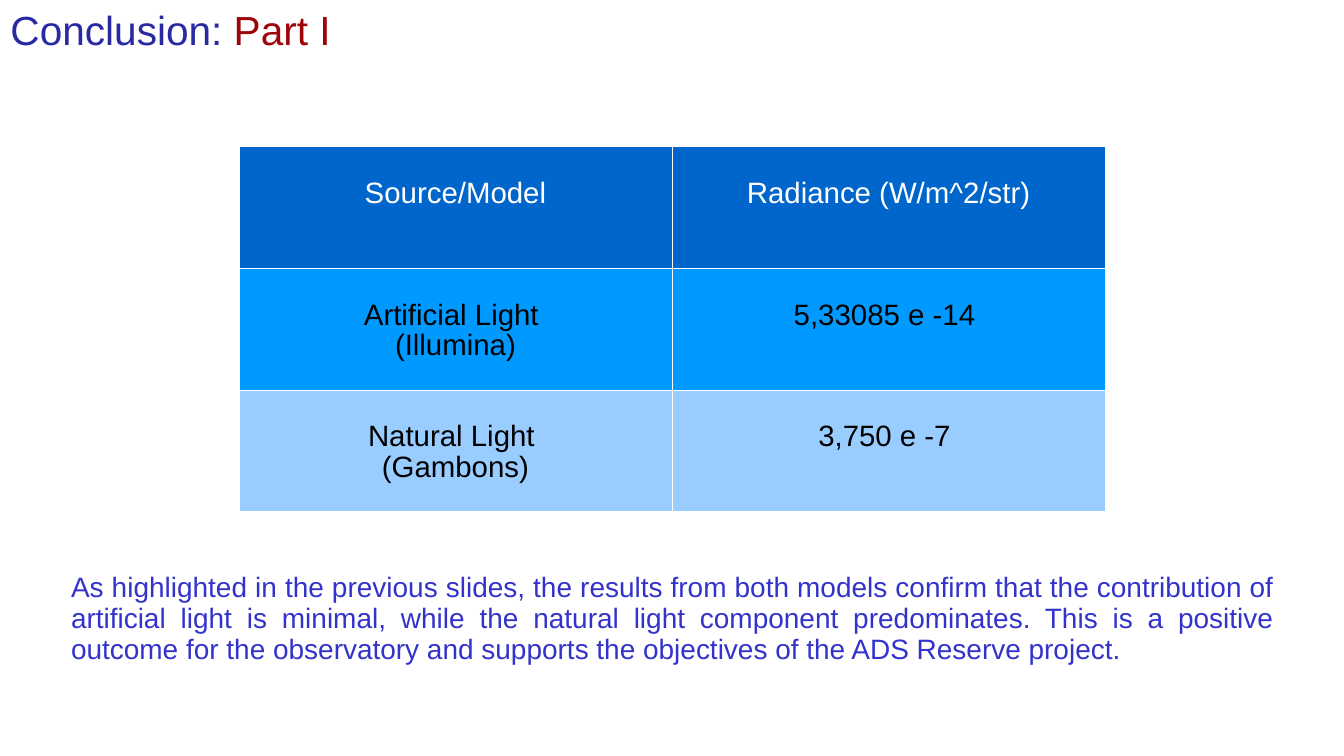
from pptx import Presentation
from pptx.dml.color import RGBColor
from pptx.enum.text import MSO_AUTO_SIZE, PP_ALIGN
from pptx.oxml import parse_xml
from pptx.oxml.ns import nsdecls
from pptx.util import Cm, Pt

WHITE = RGBColor(0xFF, 0xFF, 0xFF)
BLACK = RGBColor(0x00, 0x00, 0x00)
NAVY = RGBColor(0x29, 0x29, 0xA3)
RED = RGBColor(0x9D, 0x05, 0x0B)
INDIGO = RGBColor(0x33, 0x33, 0xCC)
HEADER_BLUE = RGBColor(0x00, 0x66, 0xCC)
MID_BLUE = RGBColor(0x00, 0x99, 0xFF)
LIGHT_BLUE = RGBColor(0x99, 0xCC, 0xFF)


class Deck:
    font = "Arial"
    line_spacing = 0.93
    inset = Cm(0.3)
    cell_top = Cm(1.65)
    cell_size = 42

    def __init__(self, width, height):
        self.prs = Presentation()
        self.prs.slide_width = Cm(width)
        self.prs.slide_height = Cm(height)
        self.s = self.prs.slides.add_slide(self.prs.slide_layouts[6])

    def paragraph(self, p, runs, size, align):
        p.alignment = align
        p.line_spacing = self.line_spacing
        for text, color in runs:
            r = p.add_run()
            r.text = text
            r.font.name = self.font
            r.font.size = Pt(size)
            r.font.color.rgb = color

    def text(self, box, runs, size, align=PP_ALIGN.LEFT, wrap=True):
        sp = self.s.shapes.add_textbox(*map(Cm, box))
        tf = sp.text_frame
        tf.word_wrap = wrap
        tf.auto_size = MSO_AUTO_SIZE.SHAPE_TO_FIT_TEXT
        tf.margin_left = tf.margin_right = self.inset
        tf.margin_top = tf.margin_bottom = self.inset
        self.paragraph(tf.paragraphs[0], runs, size, align)

    def borders(self, cell, color):
        tc_pr = cell._tc.get_or_add_tcPr()
        for i, side in enumerate(("lnL", "lnR", "lnT", "lnB")):
            tc_pr.insert(i, parse_xml(
                f'<a:{side} {nsdecls("a")} w="{Pt(0.25)}"><a:solidFill>'
                f'<a:srgbClr val="{color}"/></a:solidFill></a:{side}>'))

    def cell(self, cell, lines, fill, color):
        cell.fill.solid()
        cell.fill.fore_color.rgb = fill
        cell.margin_left = cell.margin_right = cell.margin_bottom = 0
        cell.margin_top = self.cell_top
        tf = cell.text_frame
        for i, line in enumerate(lines):
            p = tf.add_paragraph() if i else tf.paragraphs[0]
            self.paragraph(p, [(line, color)], self.cell_size, PP_ALIGN.CENTER)
        self.borders(cell, WHITE)

    def table(self, box, rows):
        table = self.s.shapes.add_table(len(rows), 2, *map(Cm, box)).table
        for i, (fill, color, cells) in enumerate(rows):
            for j, lines in enumerate(cells):
                self.cell(table.cell(i, j), lines, fill, color)

    def save(self):
        self.prs.save("out.pptx")


def main():
    deck = Deck(67.74, 38.1)
    deck.table((12.04, 7.37, 43.66, 18.4), [
        (HEADER_BLUE, WHITE, (["Source/Model"], ["Radiance (W/m^2/str)"])),
        (MID_BLUE, BLACK, (["Artificial Light ", "(Illumina)"], ["5,33085 e -14 "])),
        (LIGHT_BLUE, BLACK, (["Natural Light ", "(Gambons)"], ["3,750 e -7 "])),
    ])
    deck.text((3.28, 28.55, 61.19, 5.1), [(
        "As highlighted in the previous slides, the results from both models confirm "
        "that the contribution of artificial light is minimal, while the natural light "
        "component predominates. This is a positive outcome for the observatory and "
        "supports the objectives of the ADS Reserve project.", INDIGO)],
        40, PP_ALIGN.JUSTIFY)
    deck.text((0.23, 0.18, 16.8, 2.92),
              [("Conclusion: ", NAVY), ("Part I", RED)], 58, wrap=False)
    deck.save()


if __name__ == "__main__":
    main()
